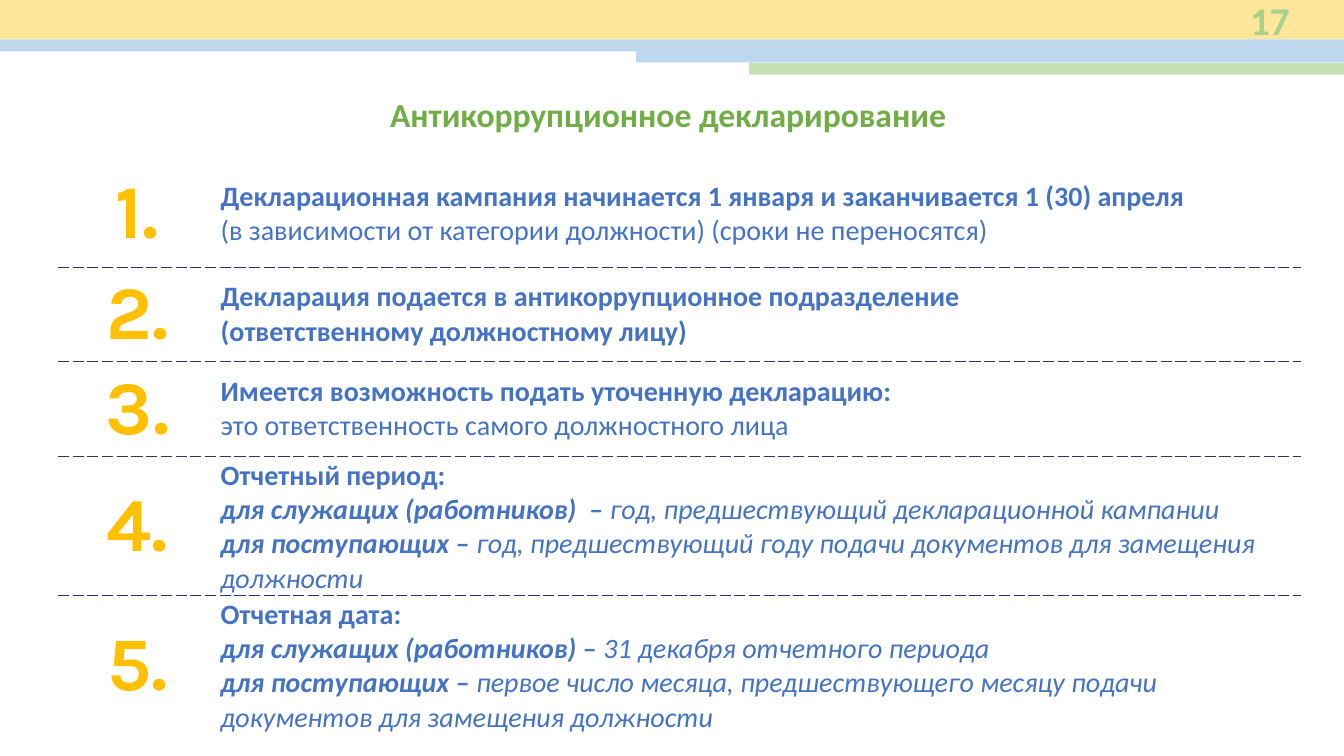
from dataclasses import dataclass

from lxml import etree
from pptx import Presentation
from pptx.dml.color import RGBColor
from pptx.enum.shapes import MSO_SHAPE
from pptx.enum.text import MSO_ANCHOR, MSO_AUTO_SIZE, PP_ALIGN
from pptx.oxml.ns import qn
from pptx.util import Pt

EMU_PER_PX = 9144
RECTANGLE = MSO_SHAPE.RECTANGLE
MIDDLE = MSO_ANCHOR.MIDDLE
NO_AUTOFIT = MSO_AUTO_SIZE.NONE
LEFT, CENTER, RIGHT = PP_ALIGN.LEFT, PP_ALIGN.CENTER, PP_ALIGN.RIGHT

YELLOW = RGBColor(0xFF, 0xE6, 0x99)
LIGHT_BLUE = RGBColor(0xBD, 0xD7, 0xEE)
LIGHT_GREEN = RGBColor(0xC5, 0xE0, 0xB4)
PAGE_GREEN = RGBColor(0xA9, 0xD1, 0x8E)
TITLE_GREEN = RGBColor(0x70, 0xAD, 0x47)
GOLD = RGBColor(0xFF, 0xC0, 0x00)
TEXT_BLUE = RGBColor(0x44, 0x72, 0xC4)
RULE_BLUE = RGBColor(0x21, 0x38, 0x6F)

SLIDE_WIDTH, SLIDE_HEIGHT = 1333, 750
TABLE_LEFT, TABLE_TOP = 58, 159
COLUMN_WIDTHS = (157, 1075)


@dataclass(frozen=True)
class Band:
    left: int
    top: int
    height: int
    color: RGBColor


@dataclass(frozen=True)
class Phrase:
    text: str
    bold: bool = True
    italic: bool = False


@dataclass(frozen=True)
class Rule:
    height: int
    paragraphs: tuple[tuple[Phrase, ...], ...]


BANDS = (
    Band(0, 0, 39, YELLOW),
    Band(0, 39, 12, LIGHT_BLUE),
    Band(631, 50, 12, LIGHT_BLUE),
    Band(743, 62, 12, LIGHT_GREEN),
)


def period_paragraph(group: str, period: str) -> tuple[Phrase, Phrase]:
    return Phrase(group, italic=True), Phrase(period, bold=False, italic=True)


RULES = (
    Rule(106, ((
        Phrase("Декларационная кампания начинается 1 января и заканчивается 1 (30) апреля \n"),
        Phrase("(в зависимости от категории должности) (сроки не переносятся)", bold=False),
    ),)),
    Rule(94, ((
        Phrase("Декларация подается в антикоррупционное подразделение \n"
               "(ответственному должностному лицу)"),
    ),)),
    Rule(94, ((
        Phrase("Имеется возможность подать уточенную декларацию: \n"),
        Phrase("это ответственность самого должностного лица", bold=False),
    ),)),
    Rule(138, (
        (Phrase("Отчетный период:"),),
        period_paragraph("для служащих (работников)  – ",
                         "год, предшествующий декларационной кампании"),
        period_paragraph("для поступающих – ",
                         "год, предшествующий году подачи документов для замещения должности"),
    )),
    Rule(138, (
        (Phrase("Отчетная дата:"),),
        period_paragraph("для служащих (работников) – ", "31 декабря отчетного периода"),
        period_paragraph("для поступающих – ",
                         "первое число месяца, предшествующего месяцу подачи "
                         "документов для замещения должности"),
    )),
)


def px(length: int) -> int:
    return length * EMU_PER_PX


def add_text(paragraph, text: str, *, size: int, color: RGBColor, font: str = "Calibri",
             bold: bool = True, italic: bool = False, align=LEFT) -> None:
    paragraph.alignment = align
    for index, line in enumerate(text.split("\n")):
        if index:
            paragraph.add_line_break()
        if line:
            run = paragraph.add_run()
            run.text = line
            run.font.name = font
            run.font.size = Pt(size)
            run.font.bold = bold
            run.font.italic = italic
            run.font.color.rgb = color


def add_band(slide, band: Band) -> None:
    shape = slide.shapes.add_shape(RECTANGLE, px(band.left), px(band.top),
                                   px(SLIDE_WIDTH - band.left), px(band.height))
    shape.shadow.inherit = False
    shape.fill.solid()
    shape.fill.fore_color.rgb = band.color
    shape.line.fill.background()


def add_dashed_border(cell, side: str) -> None:
    properties = cell._tc.get_or_add_tcPr()
    line = etree.SubElement(properties, qn(f"a:ln{side}"), w=str(Pt(1)))
    fill = etree.SubElement(line, qn("a:solidFill"))
    etree.SubElement(fill, qn("a:srgbClr"), val=str(RULE_BLUE))
    etree.SubElement(line, qn("a:prstDash"), val="dash")


def format_cell(cell, row: int) -> None:
    if row > 0:
        add_dashed_border(cell, "T")
    if row < len(RULES) - 1:
        add_dashed_border(cell, "B")
    cell.fill.background()
    cell.vertical_anchor = MIDDLE
    cell.margin_left = cell.margin_right = px(4)
    cell.margin_top = cell.margin_bottom = px(2)


def add_rules_table(slide) -> None:
    height = sum(rule.height for rule in RULES)
    table = slide.shapes.add_table(len(RULES), len(COLUMN_WIDTHS), px(TABLE_LEFT), px(TABLE_TOP),
                                   px(sum(COLUMN_WIDTHS)), px(height)).table
    table.first_row = False
    table.horz_banding = False
    for column, width in zip(table.columns, COLUMN_WIDTHS):
        column.width = px(width)
    for row, rule in enumerate(RULES):
        table.rows[row].height = px(rule.height)
        number_cell, text_cell = table.cell(row, 0), table.cell(row, 1)
        format_cell(number_cell, row)
        format_cell(text_cell, row)
        add_text(number_cell.text_frame.paragraphs[0], f"{row + 1}.",
                 size=54, color=GOLD, font="Karla", align=CENTER)
        frame = text_cell.text_frame
        for index, phrases in enumerate(rule.paragraphs):
            paragraph = frame.add_paragraph() if index else frame.paragraphs[0]
            for phrase in phrases:
                add_text(paragraph, phrase.text, size=20, color=TEXT_BLUE,
                         bold=phrase.bold, italic=phrase.italic)


def add_page_number(slide) -> None:
    frame = slide.shapes.add_textbox(px(1193), 0, px(96), px(39)).text_frame
    frame.word_wrap = True
    frame.vertical_anchor = MIDDLE
    add_text(frame.paragraphs[0], "17", size=28, color=PAGE_GREEN, align=RIGHT)


def set_title(slide) -> None:
    title = slide.shapes.title
    title.left, title.top, title.width, title.height = px(60), px(88), px(1213), px(50)
    frame = title.text_frame
    frame.auto_size = NO_AUTOFIT
    frame.vertical_anchor = MIDDLE
    add_text(frame.paragraphs[0], "Антикоррупционное декларирование ",
             size=24, color=TITLE_GREEN, align=CENTER)


def main() -> None:
    presentation = Presentation()
    presentation.slide_width = px(SLIDE_WIDTH)
    presentation.slide_height = px(SLIDE_HEIGHT)
    slide = presentation.slides.add_slide(presentation.slide_layouts.get_by_name("Title Only"))
    for band in BANDS:
        add_band(slide, band)
    add_page_number(slide)
    set_title(slide)
    add_rules_table(slide)
    presentation.save("out.pptx")


if __name__ == "__main__":
    main()
